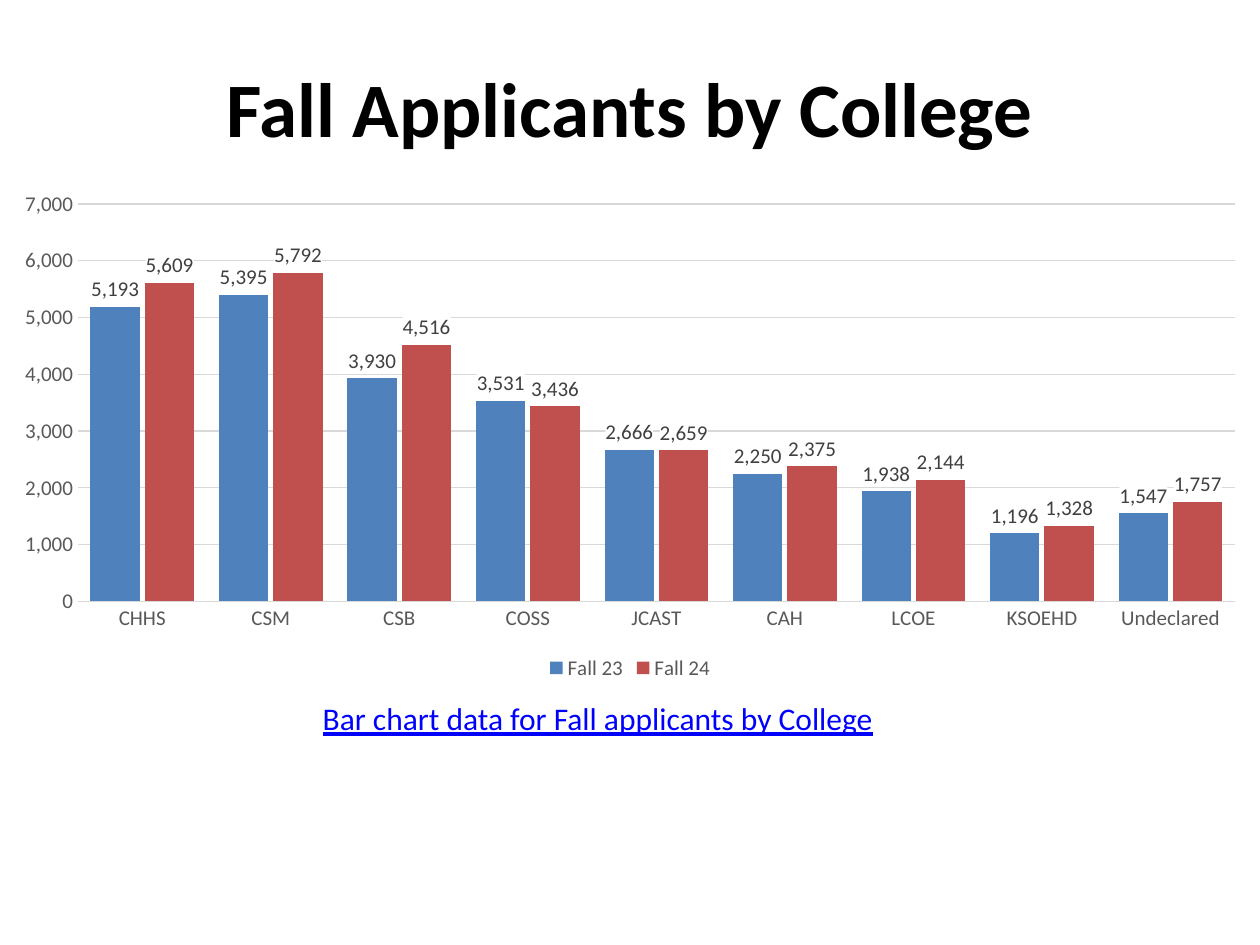
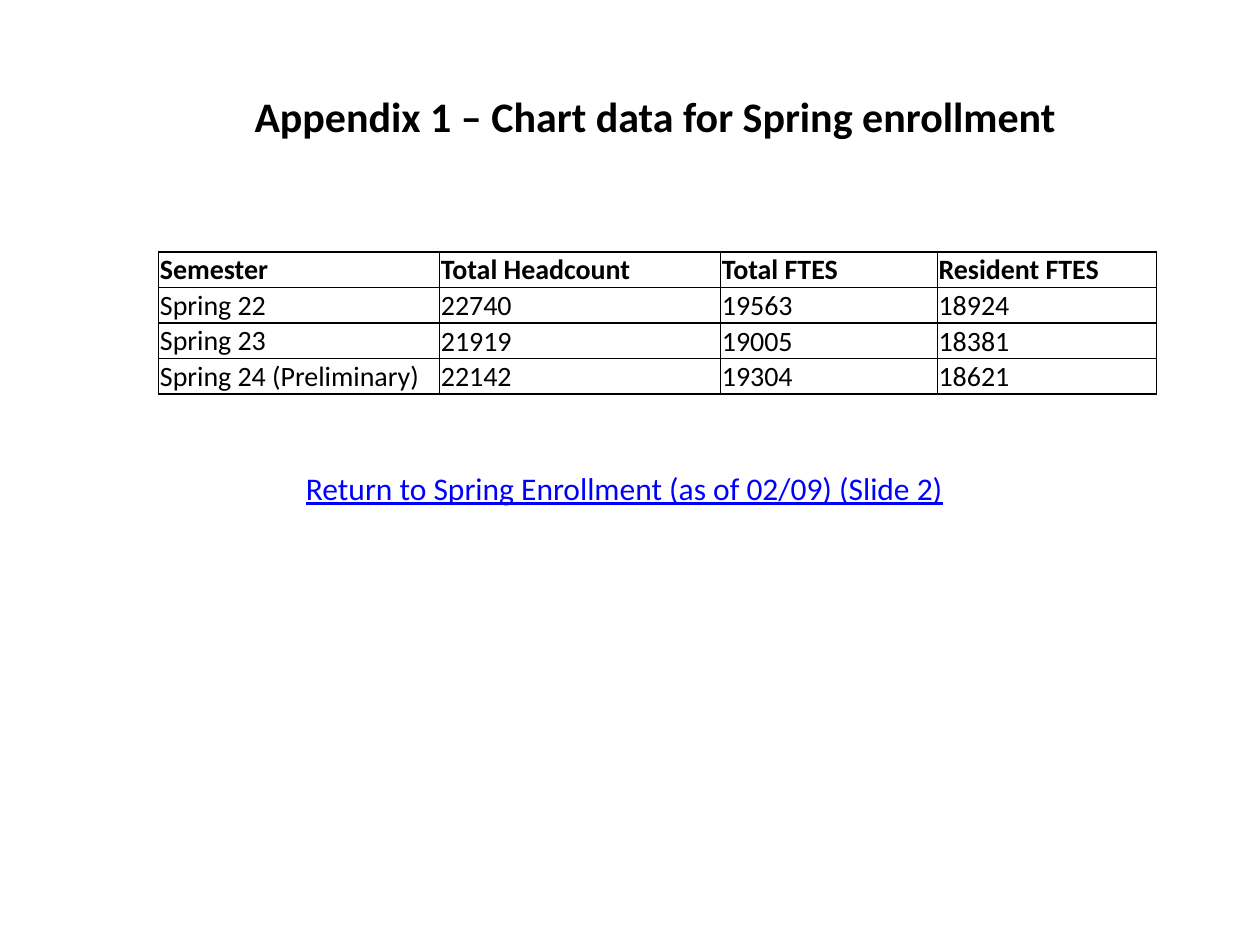
from dataclasses import dataclass

from lxml.etree import SubElement
from pptx import Presentation
from pptx.chart.data import CategoryChartData as ChartData
from pptx.dml.color import RGBColor as RGB
from pptx.enum.chart import XL_CHART_TYPE as Chart, XL_LABEL_POSITION as LabelPos
from pptx.enum.chart import XL_LEGEND_POSITION as LegendPos, XL_TICK_MARK as Tick
from pptx.enum.text import MSO_ANCHOR as Anchor, MSO_AUTO_SIZE as Fit, PP_ALIGN as Align
from pptx.oxml import parse_xml
from pptx.oxml.ns import nsdecls, qn
from pptx.util import Emu, Pt

PX = 9144  # 100 px to the inch


@dataclass(frozen=True)
class Theme:
    font: str = "Calibri"
    text: str = "000000"
    link: str = "0000FF"
    paper: str = "FFFFFF"
    axis: str = "595959"
    label: str = "404040"
    grid: str = "D9D9D9"
    series: tuple = ("4F81BD", "C0504D")
    title_size: int = 44
    appendix_size: int = 24
    link_size: int = 18
    table_size: int = 16
    chart_size: int = 12
    border: float = 1
    hairline: float = 0.75


def px(*lengths):
    return [Emu(n * PX) for n in lengths]


def assign(obj, values):
    for name, value in values.items():
        setattr(obj, name, value)


class Deck:
    def __init__(self, theme, width, height):
        self.theme = theme
        self.prs = Presentation()
        self.prs.slide_width, self.prs.slide_height = px(width, height)
        self.s = None

    def new_slide(self):
        self.s = self.prs.slides.add_slide(self.prs.slide_layouts[5])

    def style(self, font, size, color, **extra):
        assign(font, {"name": self.theme.font, "size": Pt(size), **extra})
        font.color.rgb = RGB.from_string(color)

    def stroke(self, line):
        line.color.rgb = RGB.from_string(self.theme.grid)
        line.width = Pt(self.theme.hairline)

    def title(self, text, box, size):
        sp = self.s.shapes.title
        assign(sp, dict(zip(("left", "top", "width", "height"), px(*box))))
        tf = sp.text_frame
        assign(tf, {"margin_left": 0, "margin_right": 0, "vertical_anchor": Anchor.MIDDLE})
        p = tf.paragraphs[0]
        p.alignment = Align.CENTER
        r = p.add_run()
        r.text = text
        self.style(r.font, size, self.theme.text, bold=True)

    def link_text(self, text, box, align):
        tf = self.s.shapes.add_textbox(*px(*box)).text_frame
        assign(tf, {"word_wrap": True, "auto_size": Fit.SHAPE_TO_FIT_TEXT})
        p = tf.paragraphs[0]
        p.alignment = align
        r = p.add_run()
        r.text = text
        self.style(r.font, self.theme.link_size, self.theme.link, underline=True)

    def columns(self, categories, series, box):
        t = self.theme
        data = ChartData(number_format="#,##0")
        data.categories = categories
        for name, values in series.items():
            data.add_series(name, values)
        chart = self.s.shapes.add_chart(Chart.COLUMN_CLUSTERED, *px(*box), data).chart
        chart.has_title = False
        self.style(chart.font, t.chart_size, t.text)

        # Axes and legend
        cat, val = chart.category_axis, chart.value_axis
        for axis in (cat, val):
            assign(axis, {"major_tick_mark": Tick.NONE, "minor_tick_mark": Tick.NONE})
            self.style(axis.tick_labels.font, t.chart_size, t.axis)
        self.stroke(cat.format.line)
        assign(val, {"minimum_scale": 0, "maximum_scale": 7000, "major_unit": 1000})
        assign(val.tick_labels, {"number_format": "#,##0", "number_format_is_linked": False})
        val.format.line.fill.background()
        self.stroke(val.major_gridlines.format.line)
        chart.has_legend = True
        assign(chart.legend, {"position": LegendPos.BOTTOM, "include_in_layout": False})
        self.style(chart.legend.font, t.chart_size, t.axis)

        # Columns and their labels
        plot = chart.plots[0]
        assign(plot, {"gap_width": 50, "overlap": -10, "vary_by_categories": False})
        for ser, color in zip(plot.series, t.series):
            ser.format.fill.solid()
            ser.format.fill.fore_color.rgb = RGB.from_string(color)
            labels = ser.data_labels
            assign(labels, {"show_value": True, "number_format": "#,##0",
                            "number_format_is_linked": False,
                            "position": LabelPos.OUTSIDE_END})
            self.style(labels.font, t.chart_size, t.label)
            self.label_fill(ser)

    def label_fill(self, ser):
        text_props = ser._element.find(qn("c:dLbls")).find(qn("c:txPr"))
        text_props.addprevious(parse_xml(
            f'<c:spPr {nsdecls("c", "a")}><a:solidFill>'
            f'<a:srgbClr val="{self.theme.paper}"/></a:solidFill></c:spPr>'))

    def table(self, rows, left, top, widths, row_height):
        t = self.theme
        frame = self.s.shapes.add_table(len(rows), len(widths), *px(
            left, top, sum(widths), row_height * len(rows)))
        table = frame.table
        assign(table, {"first_row": False, "horz_banding": False})
        for col, width in zip(table.columns, px(*widths)):
            col.width = width
        for i, row in enumerate(rows):
            for j, text in enumerate(row):
                cell = table.cell(i, j)
                inset = px(1)[0]
                assign(cell, {"margin_left": inset, "margin_right": inset,
                              "margin_top": inset, "margin_bottom": 0,
                              "vertical_anchor": Anchor.BOTTOM if i and j else Anchor.TOP})
                r = cell.text_frame.paragraphs[0].add_run()
                r.text = text
                self.style(r.font, t.table_size, t.text, bold=i == 0)
                self.borders(cell)
                cell.fill.background()

    def borders(self, cell):
        props = cell._tc.get_or_add_tcPr()
        for side in ("a:lnL", "a:lnR", "a:lnT", "a:lnB"):
            ln = SubElement(props, qn(side), w=str(Pt(self.theme.border)))
            fill = SubElement(ln, qn("a:solidFill"))
            SubElement(fill, qn("a:srgbClr"), val=self.theme.text)


def main():
    theme = Theme()
    deck = Deck(theme, 1000, 750)

    # Applicants by college
    deck.new_slide()
    deck.title("Fall Applicants by College", (50, 22, 900, 125), theme.title_size)
    deck.columns(
        ["CHHS", "CSM", "CSB", "COSS", "JCAST", "CAH", "LCOE", "KSOEHD", "Undeclared"],
        {"Fall 23": [5193, 5395, 3930, 3531, 2666, 2250, 1938, 1196, 1547],
         "Fall 24": [5609, 5792, 4516, 3436, 2659, 2375, 2144, 1328, 1757]},
        (0, 144, 1000, 400))
    deck.link_text("Bar chart data for Fall applicants by College",
                   (133, 550, 683, 40), Align.CENTER)

    # Spring enrollment data
    deck.new_slide()
    deck.title("Appendix 1 – Chart data for Spring enrollment",
               (70, 29, 900, 125), theme.appendix_size)
    deck.table(
        [["Semester", "Total Headcount", "Total FTES", "Resident FTES"],
         ["Spring 22", "22740", "19563", "18924"],
         ["Spring 23", "21919", "19005", "18381"],
         ["Spring 24 (Preliminary)", "22142", "19304", "18621"]],
        126, 200, (223, 223, 172, 174), 28)
    deck.link_text("Return to Spring Enrollment (as of 02/09) (Slide 2)",
                   (233, 367, 767, 42), Align.LEFT)

    deck.prs.save("out.pptx")


if __name__ == "__main__":
    main()
